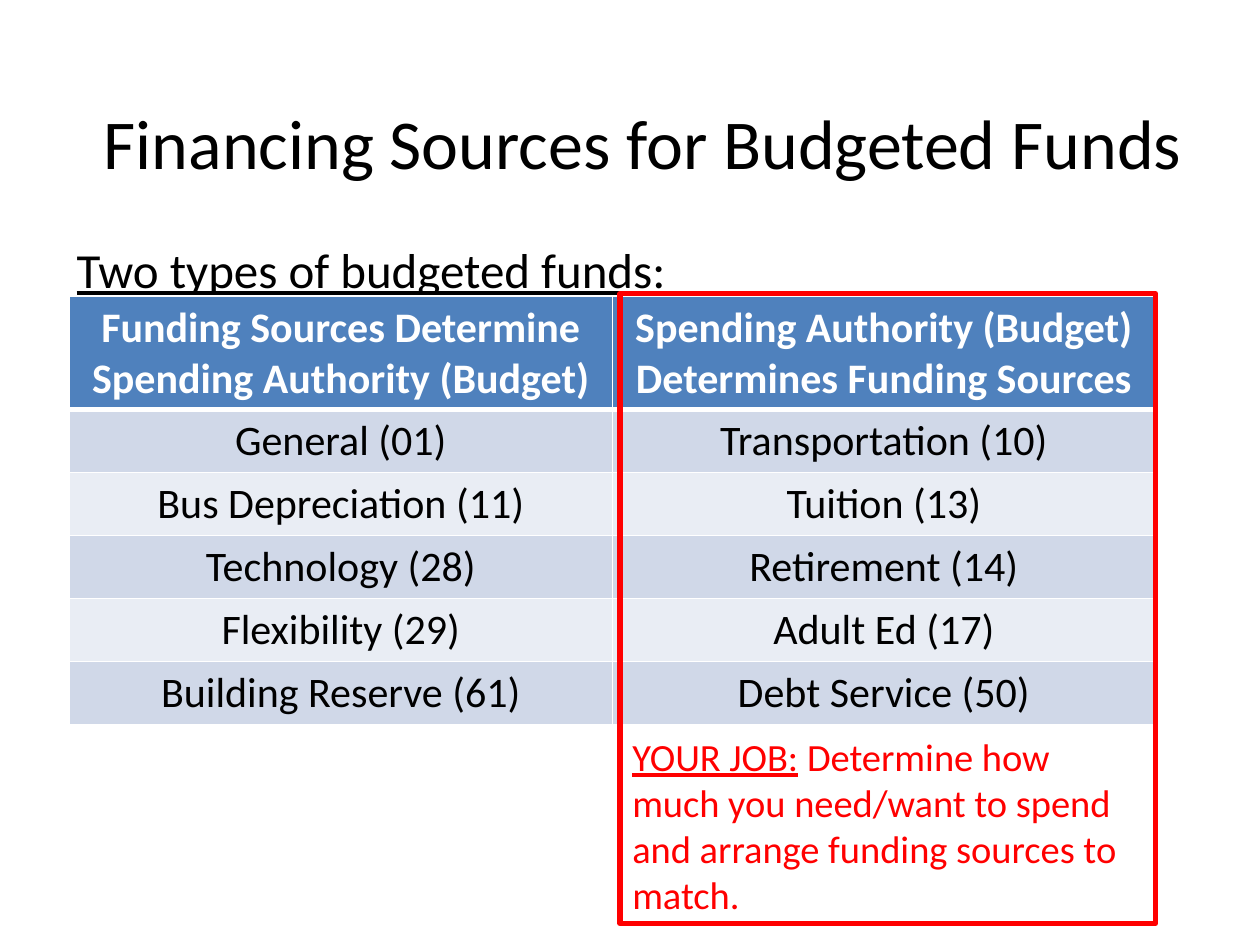
from lxml import etree
from pptx import Presentation, util as u
from pptx.dml import color
from pptx.enum import shapes, text
from pptx.oxml import ns

ROWS = [
    ("Funding Sources Determine Spending Authority (Budget)",
     "Spending Authority (Budget) Determines Funding Sources"),
    ("General (01)", "Transportation (10)"),
    ("Bus Depreciation (11)", "Tuition (13)"),
    ("Technology (28)", "Retirement (14)"),
    ("Flexibility (29)", "Adult Ed (17)"),
    ("Building Reserve (61)", "Debt Service (50)"),
]


def tint(code):
    """Turn a hex string into a colour."""
    return color.RGBColor.from_string(code)


def write(frame, *runs, size, hue="000000", bold=False, align="LEFT", anchor="TOP"):
    """Fill a frame with one paragraph of (words, underline) runs."""
    frame.word_wrap = True
    frame.vertical_anchor = getattr(text.MSO_ANCHOR, anchor)
    para = frame.paragraphs[0]
    para.alignment = getattr(text.PP_ALIGN, align)
    for words, under in runs:
        run = para.add_run()
        run.text = words
        font = run.font
        font.name, font.size, font.bold = "Calibri", u.Pt(size), bold
        font.underline = under
        font.color.rgb = tint(hue)


def label(slide, box, *runs, **style):
    """Place a text box."""
    area = slide.shapes.add_textbox(*map(u.Inches, box))
    write(area.text_frame, *runs, **style)


def edge(cell, side, width):
    """Draw one white cell border."""
    line = etree.SubElement(cell._tc.get_or_add_tcPr(), ns.qn("a:ln" + side),
                            w=str(u.Pt(width)))
    fill = etree.SubElement(line, ns.qn("a:solidFill"))
    etree.SubElement(fill, ns.qn("a:srgbClr"), val="FFFFFF")


def funds(slide, box):
    """Place the table of budgeted funds."""
    grid = slide.shapes.add_table(len(ROWS), 2, *map(u.Inches, box)).table
    for r, row in enumerate(ROWS):
        head = r == 0
        grid.rows[r].height = u.Inches(0.9 if head else 0.5)
        for c, words in enumerate(row):
            cell = grid.cell(r, c)
            for side in "LRTB":
                thick = (r, side) in ((0, "B"), (1, "T"))
                edge(cell, side, 3 if thick else 1)
            cell.fill.solid()
            cell.fill.fore_color.rgb = tint(
                "4F81BD" if head else "D0D8E8" if r % 2 else "E9EDF4")
            write(cell.text_frame, (words, False), size=24, bold=head,
                  hue="FFFFFF" if head else "000000", align="CENTER")


def job(slide, box):
    """Place the red frame with the task at its foot."""
    rect = slide.shapes.add_shape(shapes.MSO_SHAPE.RECTANGLE, *map(u.Inches, box))
    rect.shadow.inherit = False
    rect.fill.background()
    rect.line.color.rgb = tint("FF0000")
    rect.line.width = u.Pt(3)
    write(rect.text_frame, ("YOUR JOB:", True),
          (" Determine how much you need/want to spend and arrange funding sources to match.", False),
          size=22, hue="FF0000", anchor="BOTTOM")


def main():
    """Build and save the slide."""
    deck = Presentation()
    deck.slide_width, deck.slide_height = u.Inches(10), u.Inches(7.5)
    slide = deck.slides.add_slide(deck.slide_layouts[6])
    label(slide, (0.69, 0.4, 8.82, 1.45), ("Financing Sources for Budgeted Funds", False),
          size=40, align="CENTER", anchor="MIDDLE")
    label(slide, (0.51, 1.85, 9, 0.75), ("Two types of budgeted funds:", True), size=28)
    funds(slide, (0.55, 2.35, 8.62, 3.4))
    job(slide, (4.92, 2.33, 4.25, 5))
    deck.save("out.pptx")


if __name__ == "__main__":
    main()
